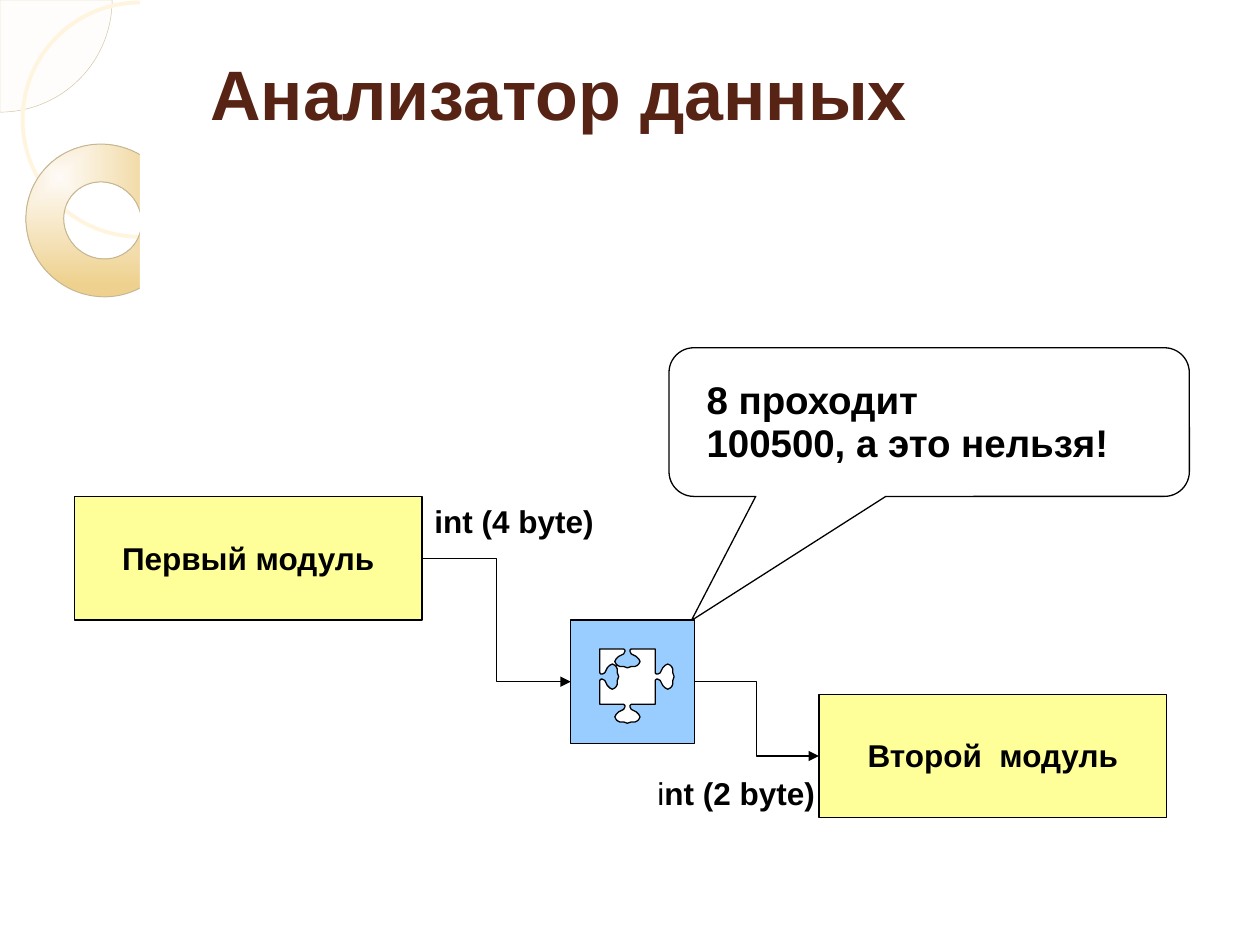
"""Build the slide showing a data analyser between two modules."""
from math import cos, pi, sin

from lxml import etree
from pptx import Presentation
from pptx.dml.color import RGBColor
from pptx.enum.shapes import MSO_CONNECTOR, MSO_SHAPE
from pptx.enum.text import MSO_ANCHOR, PP_ALIGN
from pptx.oxml import parse_xml
from pptx.oxml.ns import qn
from pptx.util import Inches, Pt

ELBOW = MSO_CONNECTOR.ELBOW
ROUNDED = MSO_SHAPE.ROUNDED_RECTANGLE
TOP, MIDDLE = MSO_ANCHOR.TOP, MSO_ANCHOR.MIDDLE
LEFT, CENTER = PP_ALIGN.LEFT, PP_ALIGN.CENTER
LEFT_SITE, RIGHT_SITE = 1, 3
DRAWING = "http://schemas.openxmlformats.org/drawingml/2006/main"


def paint(shape, fill=None, line=None, width=0.75):
    shape.shadow.inherit = False
    for target, color in ((shape.fill, fill), (shape.line.fill, line)):
        if color:
            target.solid()
            target.fore_color.rgb = RGBColor.from_string(color)
        else:
            target.background()
    if line:
        shape.line.width = Pt(width)


def write(shape, lines, size, color="000000", align=LEFT, anchor=TOP, top=0.07, spacing=0.93, bold=True):
    frame = shape.text_frame
    frame.word_wrap = True
    frame.vertical_anchor = anchor
    frame.margin_left = frame.margin_right = Inches(0.1)
    frame.margin_top, frame.margin_bottom = Inches(top), Inches(0.05)
    frame.text = "\n".join(lines)
    for para in frame.paragraphs:
        para.alignment = align
        para.line_spacing = spacing
        para.font.name = "Arial"
        para.font.size = Pt(size)
        para.font.bold = bold
        para.font.color.rgb = RGBColor.from_string(color)
    return frame


deck = Presentation()
deck.slide_width, deck.slide_height = Inches(10), Inches(7.5)
page = deck.slides.add_slide(deck.slide_layouts[5])
shapes = page.shapes

radius = Inches(0.89)
angles = [step * pi / 60 for step in range(31)]
builder = shapes.build_freeform(0, 0)
builder.add_line_segments([(radius * cos(angle), radius * sin(angle)) for angle in angles], close=True)
quarter = builder.convert_to_shape()
paint(quarter, "FCFAF4", "D1C3A0", 0.25)
color_node = quarter.fill._xPr.find(qn("a:solidFill"))[0]
etree.SubElement(color_node, qn("a:alpha"), val="33000")

ring = shapes.add_shape(MSO_SHAPE.OVAL, Inches(0.18), Inches(0.02), Inches(1.86), Inches(1.86))
paint(ring, None, "FFF4DD", 2.15)

donut = shapes.add_shape(MSO_SHAPE.DONUT, Inches(0.2), Inches(1.15), Inches(1.23), Inches(1.2))
donut.rotation = 39
donut.adjustments[0] = 0.25
paint(donut, "EED18E", "C6B792", 0.57)
donut.fill.gradient()
for stop, (position, color) in zip(donut.fill.gradient_stops, ((0, "FEFAF6"), (1, "EED18E"))):
    stop.position = position
    stop.color.rgb = RGBColor.from_string(color)
gradient = donut.fill._xPr.find(qn("a:gradFill"))
gradient.replace(gradient.find(qn("a:lin")), parse_xml(
    f'<a:path xmlns:a="{DRAWING}" path="rect">'
    '<a:fillToRect l="30000" t="30000" r="70000" b="70000"/></a:path>'))

panel = shapes.add_shape(MSO_SHAPE.RECTANGLE, Inches(1.11), 0, Inches(8.89), Inches(7.5))
paint(panel, "FFFFFF")

title = shapes.title
title.left, title.top, title.width, title.height = Inches(1.57), Inches(0.3), Inches(8.2), Inches(1.86)
write(title, ["Анализатор данных"], 40, "572314", top=0.1, spacing=1.0)
shapes._spTree.append(title._element)

callout = shapes.add_shape(
    MSO_SHAPE.ROUNDED_RECTANGULAR_CALLOUT, Inches(5.31), Inches(2.76), Inches(4.13), Inches(1.18))
for index, value in enumerate((-0.457, 1.335, 0.167)):
    callout.adjustments[index] = value
paint(callout, "FFFFFF", "000000")

boxes = []
for left, top, width, color, label in (
    (0.59, 3.94, 2.76, "FFFF99", "Первый модуль"),
    (4.53, 4.92, 0.98, "99CCFF", ""),
    (6.5, 5.51, 2.76, "FFFF99", "Второй  модуль"),
):
    box = shapes.add_shape(ROUNDED, Inches(left), Inches(top), Inches(width), Inches(0.98))
    box.adjustments[0] = 0
    paint(box, color, "000000")
    if label:
        write(box, [label], 18, align=CENTER, anchor=MIDDLE)
    boxes.append(box)

for source, target in zip(boxes, boxes[1:]):
    arrow = shapes.add_connector(ELBOW, 0, 0, 0, 0)
    arrow.begin_connect(source, RIGHT_SITE)
    arrow.end_connect(target, LEFT_SITE)
    arrow.line.color.rgb = RGBColor.from_string("000000")
    arrow.line.width = Pt(0.75)
    etree.SubElement(arrow.line._get_or_add_ln(), qn("a:tailEnd"), type="triangle")
    etree.SubElement(arrow._element.spPr, qn("a:effectLst"))

half_knob = [
    (-0.03, 0), (-0.02, 0.01), (-0.02, 0.02), (-0.03, 0.04), (-0.05, 0.05), (-0.07, 0.06),
    (-0.09, 0.08), (-0.1, 0.1), (-0.09, 0.12), (-0.08, 0.13), (-0.06, 0.14), (-0.03, 0.14),
]
knob = half_knob + [(0, 0.15)] + [(-along, depth) for along, depth in reversed(half_knob)]
near_x, far_x, near_y, far_y = 4.76, 5.2, 5.15, 5.59
middle_x, middle_y = 4.98, 5.37
outline = [(middle_x + along, near_y + depth) for along, depth in knob]
outline += [(far_x, near_y)] + [(far_x + depth, middle_y + along) for along, depth in knob]
outline += [(far_x, far_y)] + [(middle_x - along, far_y + depth) for along, depth in knob]
outline += [(near_x, far_y)] + [(near_x + depth, middle_y - along) for along, depth in knob]
builder = shapes.build_freeform(Inches(near_x), Inches(near_y))
builder.add_line_segments([(Inches(x), Inches(y)) for x, y in outline], close=True)
puzzle_piece = builder.convert_to_shape()
paint(puzzle_piece, "FFFFFF", "000000")

for left, top, width, height, size, lines in (
    (3.35, 3.94, 1.77, 0.38, 18, ["int (4 byte)"]),
    (5.51, 2.95, 3.74, 0.78, 22, ["8 проходит", "100500, а это нельзя!"]),
):
    note = shapes.add_textbox(Inches(left), Inches(top), Inches(width), Inches(height))
    write(note, lines, size)

output_note = shapes.add_textbox(Inches(5.12), Inches(6.1), Inches(1.77), Inches(0.38))
frame = write(output_note, ["і"], 18, bold=False)
span = frame.paragraphs[0].add_run()
span.text = "nt (2 byte)"
span.font.bold = True

deck.save("out.pptx")
